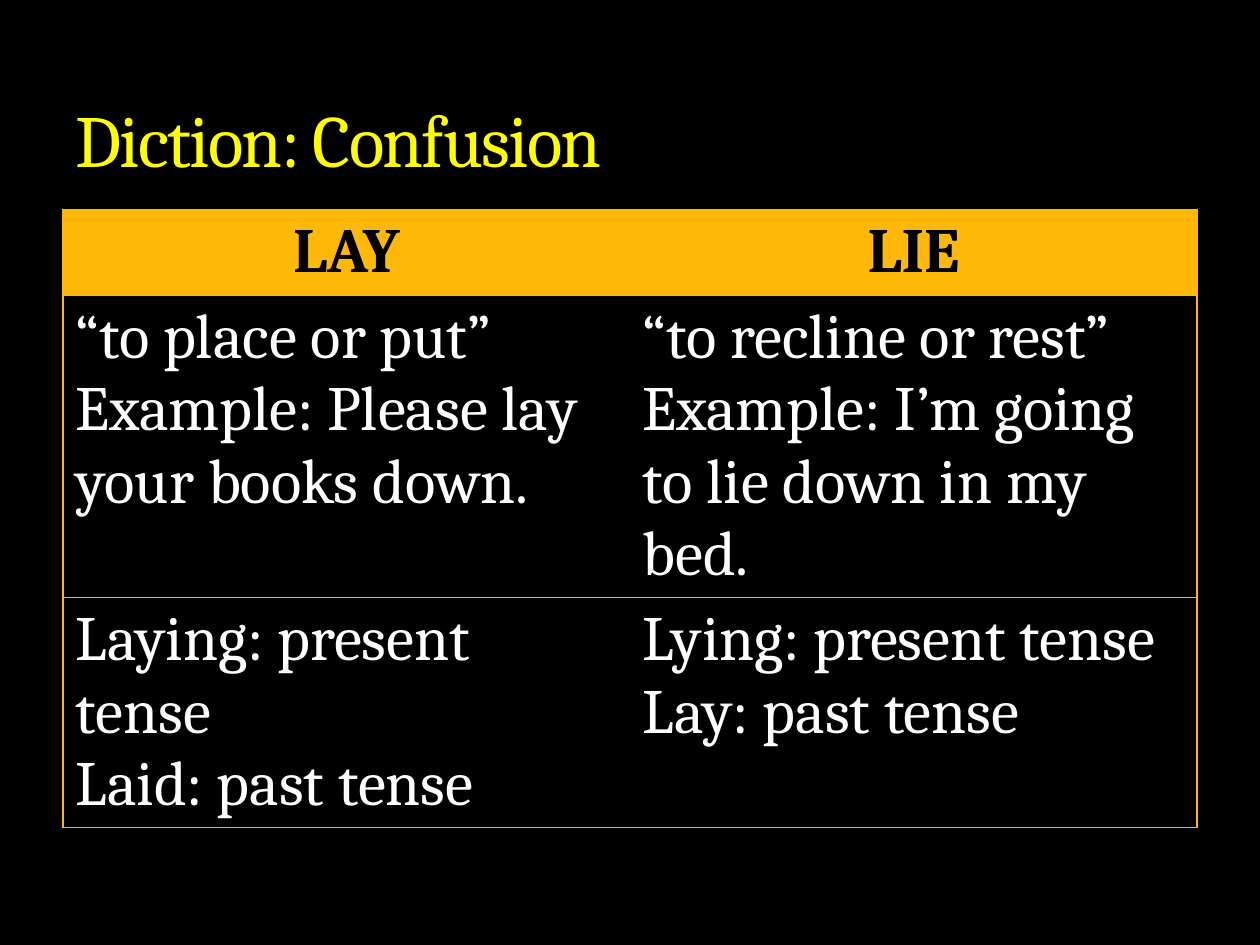
import pptx
import pptx.dml.color
import pptx.enum.text
import pptx.oxml
import pptx.oxml.ns
import pptx.util

BLACK = pptx.dml.color.RGBColor(0x00, 0x00, 0x00)
WHITE = pptx.dml.color.RGBColor(0xFF, 0xFF, 0xFF)
YELLOW = pptx.dml.color.RGBColor(0xFF, 0xFF, 0x00)
AMBER = pptx.dml.color.RGBColor(0xFE, 0xB8, 0x0A)
SLATE = pptx.dml.color.RGBColor(0x45, 0x50, 0x62)
FONT = "Cambria"
NAMESPACE = pptx.oxml.ns.nsdecls("a")


def px(length):
    return pptx.util.Emu(round(length * 914400 / 126))


def add_run(paragraph, text, size, color, bold=False):
    run = paragraph.add_run()
    run.text = text
    run.font.name = FONT
    run.font.size = pptx.util.Pt(size)
    run.font.bold = bold
    run.font.color.rgb = color
    return run


presentation = pptx.Presentation()
presentation.slide_width = px(1260)
presentation.slide_height = px(945)
slide = presentation.slides.add_slide(presentation.slide_layouts[5])
slide.background.fill.solid()
slide.background.fill.fore_color.rgb = BLACK

title = slide.shapes.title
title.left, title.top, title.width, title.height = px(63), px(21), px(1134), px(168)
title.text_frame.vertical_anchor = pptx.enum.text.MSO_ANCHOR.BOTTOM
title.text_frame.word_wrap = True
paragraph = title.text_frame.paragraphs[0]
paragraph.alignment = pptx.enum.text.PP_ALIGN.LEFT
run = add_run(paragraph, "Diction: Confusion", 42, YELLOW)
properties = run.font._element
properties.set("spc", "-100")
properties.insert(0, pptx.oxml.parse_xml(
    f'<a:ln {NAMESPACE} w="3175"><a:solidFill><a:srgbClr val="{SLATE}">'
    '<a:alpha val="25000"/></a:srgbClr></a:solidFill></a:ln>'))

rows = [
    [["LAY"], ["LIE"]],
    [["“to place or put”", "Example: Please lay your books down."],
     ["“to recline or rest”", "Example: I’m going to lie down in my bed."]],
    [["Laying: present tense", "Laid: past tense"],
     ["Lying: present tense", "Lay: past tense"]],
]
row_heights = [85, 302, 230]
table = slide.shapes.add_table(
    3, 2, px(63), px(210), px(1134), px(sum(row_heights))).table

for row_index, (row, height) in enumerate(zip(rows, row_heights)):
    table.rows[row_index].height = px(height)
    for column_index, lines in enumerate(row):
        cell = table.cell(row_index, column_index)
        header = row_index == 0
        if header:
            cell.fill.solid()
            cell.fill.fore_color.rgb = AMBER
        else:
            cell.fill.background()

        for line_index, text in enumerate(lines):
            frame = cell.text_frame
            paragraph = frame.add_paragraph() if line_index else frame.paragraphs[0]
            if header:
                paragraph.alignment = pptx.enum.text.PP_ALIGN.CENTER
            add_run(paragraph, text, 36, BLACK if header else WHITE, header)

        borders = {"lnL": column_index == 0, "lnR": column_index == 1,
                   "lnT": True, "lnB": True}
        for position, (edge, visible) in enumerate(borders.items()):
            paint = (f'<a:solidFill><a:srgbClr val="{AMBER}"/></a:solidFill>'
                     if visible else "<a:noFill/>")
            cell._tc.get_or_add_tcPr().insert(position, pptx.oxml.parse_xml(
                f'<a:{edge} {NAMESPACE} w="12700">{paint}</a:{edge}>'))

presentation.save("out.pptx")
